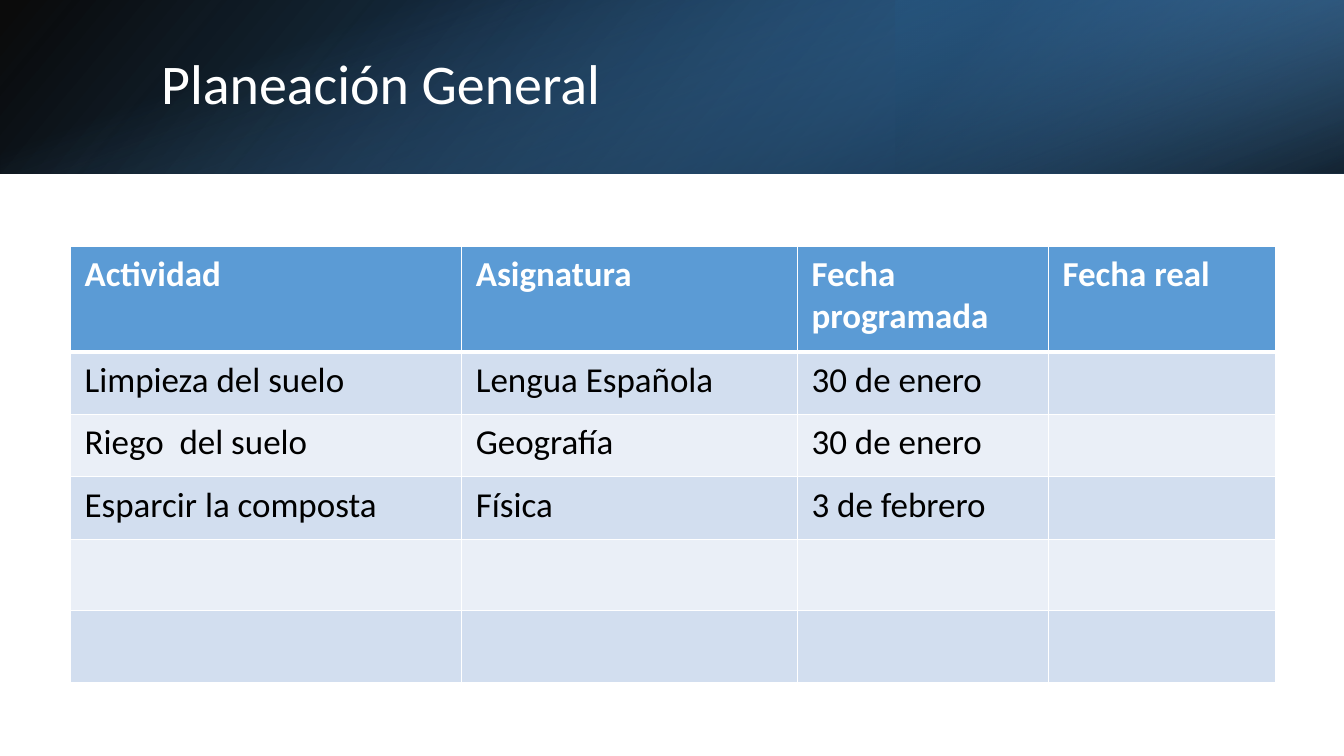
from dataclasses import dataclass
from itertools import product

from lxml.etree import SubElement
from pptx import Presentation
from pptx.dml.color import RGBColor
from pptx.enum.shapes import MSO_SHAPE
from pptx.enum.text import MSO_ANCHOR
from pptx.oxml.ns import qn
from pptx.util import Inches, Pt


@dataclass(frozen=True)
class Theme:
    font: str = "Calibri"
    white: str = "FFFFFF"
    black: str = "000000"
    accent: str = "5B9BD5"
    accent_dark: str = "2E75B6"
    accent_deep: str = "1F4E79"
    bands: tuple = ("D2DEEF", "EAEFF7")
    title_size: int = 40
    table_size: int = 25
    rule: int = 1
    header_rule: int = 3


@dataclass(frozen=True)
class Box:
    left: float
    top: float
    width: float
    height: float

    def lengths(self):
        return [Inches(v) for v in (self.left, self.top, self.width, self.height)]


THEME = Theme()
SLIDE = Box(0, 0, 13.33, 7.5)
BANNER = Box(0, 0, SLIDE.width, 1.72)
PLAN = Box(0.7, 2.44, 11.95, 4.33)
COLUMN_WIDTHS = (3.88, 3.33, 2.49, 2.25)
ROW_HEIGHTS = (1.05, 0.62, 0.62, 0.62, 0.71, 0.71)
PLAN_ROWS = (
    ("Actividad", "Asignatura", "Fecha programada", "Fecha real"),
    ("Limpieza del suelo", "Lengua Española", "30 de enero", ""),
    ("Riego  del suelo", "Geografía", "30 de enero", ""),
    ("Esparcir la composta", "Física", "3 de febrero", ""),
    ("",) * 4,
    ("",) * 4,
)


def apply_format(target, values):
    for name, value in values.items():
        setattr(target, name, value)


def write_text(paragraph, text, size, color, bold=False):
    run = paragraph.add_run()
    run.text = text
    apply_format(run.font, {"name": THEME.font, "size": Pt(size), "bold": bold})
    run.font.color.rgb = RGBColor.from_string(color)


def add_gradient(shape, stops, angle):
    properties = shape._element.spPr
    gradient = SubElement(properties, qn("a:gradFill"), rotWithShape="1")
    properties.find(qn("a:prstGeom")).addnext(gradient)
    stop_list = SubElement(gradient, qn("a:gsLst"))
    for position, color, opacity in stops:
        stop = SubElement(stop_list, qn("a:gs"), pos=str(position * 1000))
        tint = SubElement(stop, qn("a:srgbClr"), val=color)
        SubElement(tint, qn("a:alpha"), val=str(opacity * 1000))
    SubElement(gradient, qn("a:lin"), ang=str(angle * 60000), scaled="0")


def add_glow(slide, box, stops, angle, rotation=0, mirrored=False):
    glow = slide.shapes.add_shape(MSO_SHAPE.RECTANGLE, *box.lengths())
    glow.shadow.inherit = False
    glow.line.fill.background()
    glow.rotation = rotation
    if mirrored:
        glow._element.spPr.xfrm.set("flipH", "1")
    add_gradient(glow, stops, angle)


def add_banner(slide, box, text):
    third = box.width / 3
    corner = Box(box.left + 2 * third, box.top, third, box.height)
    shift = (box.width - box.height) / 2
    upright = Box(box.left + shift, box.top - shift, box.height, box.width)
    add_glow(slide, box, ((0, THEME.black, 96), (100, THEME.accent_dark, 100)),
             140, mirrored=True)
    add_glow(slide, corner, ((19, THEME.accent_deep, 68), (100, THEME.accent, 79)),
             320, rotation=180, mirrored=True)
    add_glow(slide, upright, ((23, THEME.accent, 0), (99, THEME.black, 74)),
             340, rotation=90)

    title_box = Box(box.left + 1.5, box.top + 0.38, 10.98, 0.96)
    title = slide.shapes.add_textbox(*title_box.lengths()).text_frame
    apply_format(title, {"word_wrap": True, "vertical_anchor": MSO_ANCHOR.MIDDLE})
    heading = title.paragraphs[0]
    heading.line_spacing = 0.9
    write_text(heading, text, THEME.title_size, THEME.white)


def add_borders(cell, widths):
    properties = cell._tc.get_or_add_tcPr()
    for side, width in widths.items():
        border = SubElement(properties, qn(f"a:ln{side}"), w=str(Pt(width)))
        fill = SubElement(border, qn("a:solidFill"))
        SubElement(fill, qn("a:srgbClr"), val=THEME.white)


def add_plan(slide, box, rows):
    frame = slide.shapes.add_table(len(rows), len(COLUMN_WIDTHS), *box.lengths())
    plan = frame.table
    for column, width in zip(plan.columns, COLUMN_WIDTHS):
        column.width = Inches(width)
    for row, height in zip(plan.rows, ROW_HEIGHTS):
        row.height = Inches(height)
    margins = {
        "margin_left": Inches(0.14), "margin_right": Inches(0.14),
        "margin_top": Inches(0.07), "margin_bottom": Inches(0.07),
    }
    for r, c in product(range(len(rows)), range(len(COLUMN_WIDTHS))):
        header = r == 0
        cell = plan.cell(r, c)
        apply_format(cell, margins)
        add_borders(cell, {
            "L": THEME.rule,
            "R": THEME.rule,
            "T": THEME.header_rule if r == 1 else THEME.rule,
            "B": THEME.header_rule if header else THEME.rule,
        })
        cell.fill.solid()
        cell.fill.fore_color.rgb = RGBColor.from_string(
            THEME.accent if header else THEME.bands[(r - 1) % 2])
        if rows[r][c]:
            write_text(cell.text_frame.paragraphs[0], rows[r][c], THEME.table_size,
                       THEME.white if header else THEME.black, bold=header)


def main():
    deck = Presentation()
    apply_format(deck, {"slide_width": Inches(SLIDE.width),
                        "slide_height": Inches(SLIDE.height)})
    slide = deck.slides.add_slide(deck.slide_layouts[6])
    add_banner(slide, BANNER, "Planeación General")
    add_plan(slide, PLAN, PLAN_ROWS)
    deck.save("out.pptx")


if __name__ == "__main__":
    main()
